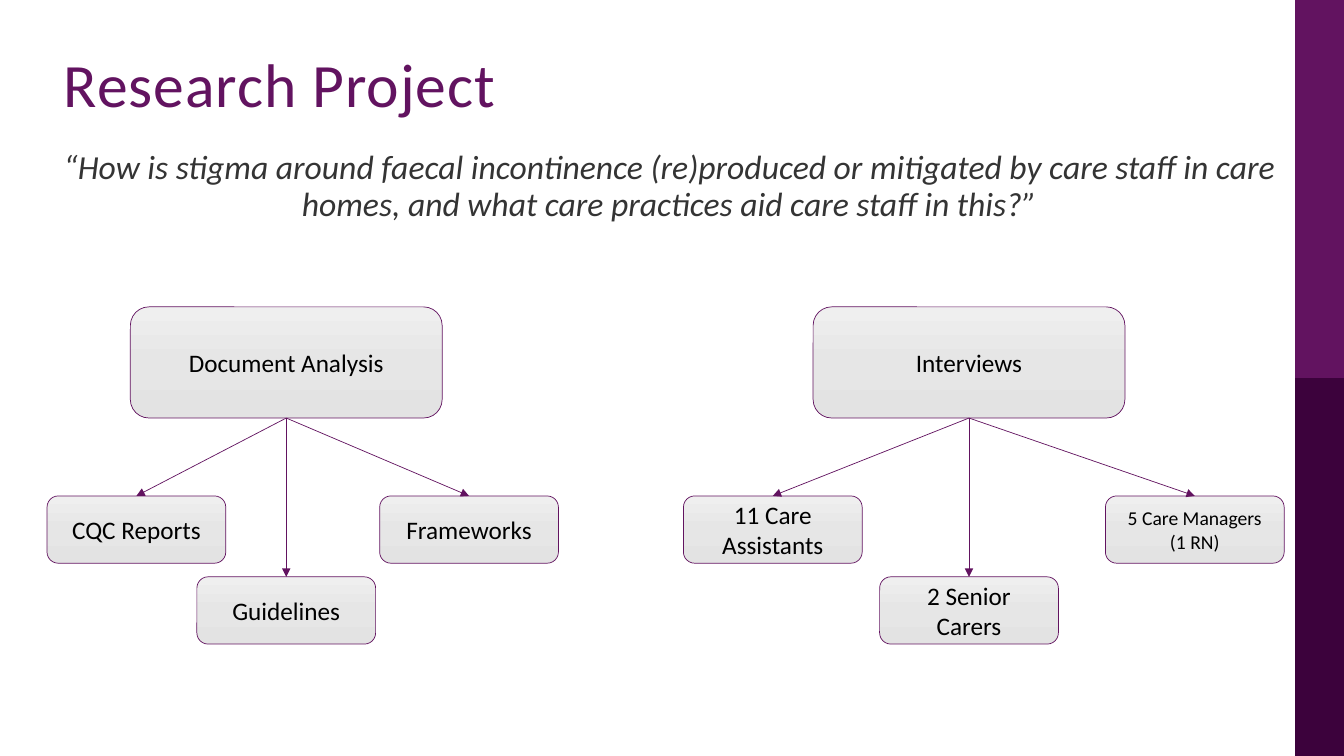
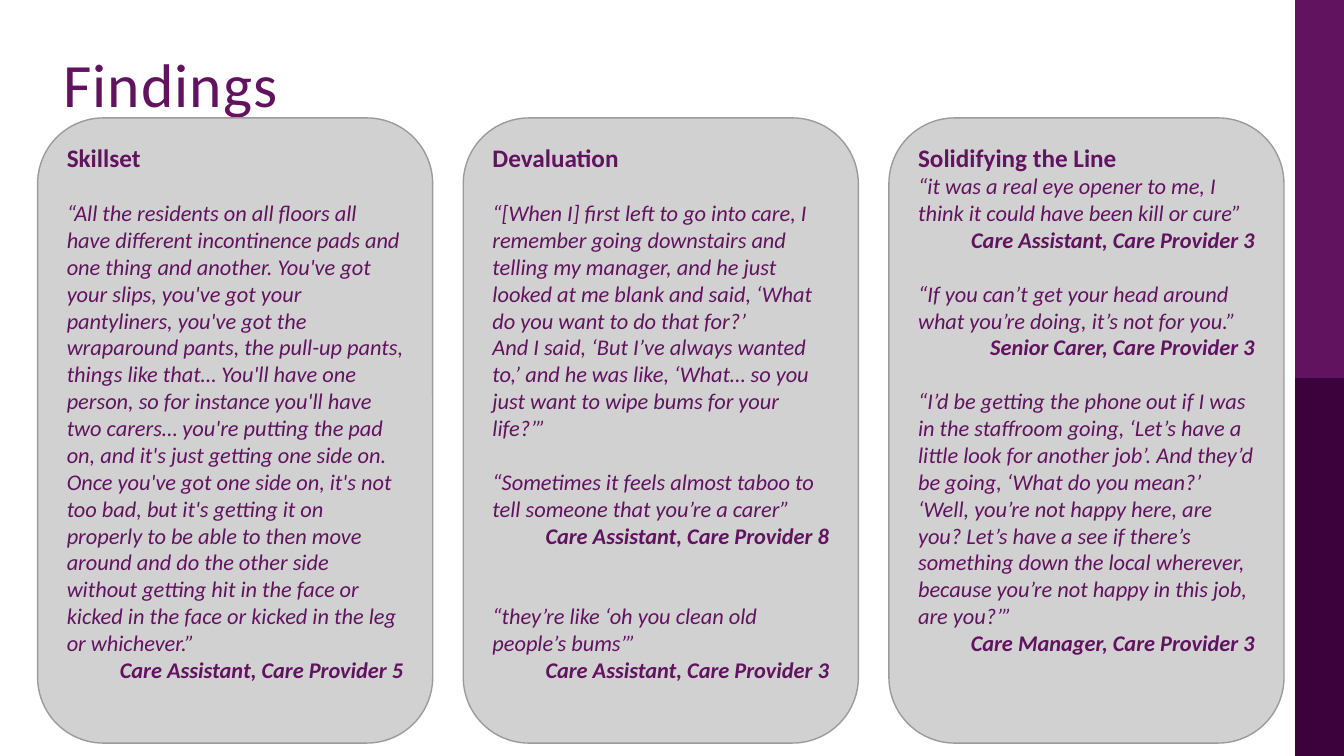
from copy import deepcopy
from dataclasses import dataclass
from typing import Any

from lxml import etree
from pptx import Presentation
from pptx.dml.color import RGBColor
from pptx.enum.shapes import MSO_CONNECTOR, MSO_SHAPE
from pptx.enum.text import MSO_ANCHOR, PP_ALIGN
from pptx.oxml.ns import qn
from pptx.util import Inches, Pt

RECT, ROUNDED = MSO_SHAPE.RECTANGLE, MSO_SHAPE.ROUNDED_RECTANGLE
STRAIGHT = MSO_CONNECTOR.STRAIGHT
TOP, MIDDLE = MSO_ANCHOR.TOP, MSO_ANCHOR.MIDDLE
LEFT, CENTER, RIGHT = PP_ALIGN.LEFT, PP_ALIGN.CENTER, PP_ALIGN.RIGHT

PLUM = RGBColor(0x62, 0x13, 0x60)
DARK_PLUM = RGBColor(0x3C, 0x02, 0x3C)
CHARCOAL = RGBColor(0x34, 0x34, 0x34)
BLACK = RGBColor(0, 0, 0)
CARD_FILL = RGBColor(0xD1, 0xD1, 0xD1)
CARD_LINE = RGBColor(0x9B, 0x9B, 0x9B)
BOX_STOPS = (
    (0, RGBColor(0xEF, 0xEF, 0xEF)),
    (0.5, RGBColor(0xE6, 0xE6, 0xE6)),
    (1, RGBColor(0xE3, 0xE3, 0xE3)),
)

FONT = "Calibri"
WIDTH, HEIGHT = Inches(13.33), Inches(7.5)
BLANK_LINE = 19.2  # points, one line of quote text

# All positions and sizes below are percentages of the slide's width and height.
BAND_LEFT, BAND_HEIGHT = 96.37, 50
TITLE_BOX = (4, 8.1, 91.4, 16.5)
QUESTION_BOX = (4, 19.3, 91.6, 13.9)
METHOD_TOP, METHOD_WIDTH, METHOD_HEIGHT = 40.6, 23.2, 14.7
LEAF_ROWS, LEAF_WIDTH, LEAF_HEIGHT = (65.6, 76.3), 13.3, 8.9
CARD_LEFT, CARD_TOP, CARD_PITCH = 2.8, 15.6, 31.67
CARD_WIDTH, CARD_HEIGHT = 29.4, 82.7

TITLE = {"font": {"size": Pt(44)}, "para": {"line_spacing": Pt(36)}}
QUESTION = {
    "font": {"size": Pt(24), "italic": True},
    "para": {"alignment": CENTER, "line_spacing": 0.9},
}
HEADING = {"font": {"size": Pt(18), "bold": True}, "para": {"alignment": LEFT}}
QUOTE = {"font": {"size": Pt(16), "italic": True}, "para": {"alignment": LEFT}}
SPEAKER = {
    "font": {"size": Pt(16), "italic": True, "bold": True},
    "para": {"alignment": RIGHT},
}


@dataclass(frozen=True)
class Para:
    text: str
    style: dict[str, Any]
    blank_lines: int = 0


@dataclass(frozen=True)
class Leaf:
    lines: tuple[str, ...]
    center: float
    row: int = 0
    size: int = 18


@dataclass(frozen=True)
class Method:
    label: str
    center: float
    leaves: tuple[Leaf, ...]


METHODS = (
    Method("Document Analysis", 21.3, (
        Leaf(("CQC Reports",), 10.15),
        Leaf(("Guidelines",), 21.3, row=1),
        Leaf(("Frameworks",), 34.9),
    )),
    Method("Interviews", 72.1, (
        Leaf(("11 Care Assistants",), 57.5),
        Leaf(("2 Senior Carers",), 72.1, row=1),
        Leaf(("5 Care Managers", "(1 RN)"), 88.9, size=14),
    )),
)

CARDS = (
    (
        Para("Skillset", HEADING),
        Para("“All the residents on all floors all have different incontinence pads and "
             "one thing and another. You've got your slips, you've got your pantyliners, "
             "you've got the wraparound pants, the pull-up pants, things like that… "
             "You'll have one person, so for instance you'll have two carers… you're "
             "putting the pad on, and it's just getting one side on. Once you've got one "
             "side on, it's not too bad, but it's getting it on properly to be able to "
             "then move around and do the other side without getting hit in the face or "
             "kicked in the face or kicked in the leg or whichever.”", QUOTE, 1),
        Para("Care Assistant, Care Provider 5", SPEAKER),
    ),
    (
        Para("Devaluation", HEADING),
        Para("“[When I] first left to go into care, I remember going downstairs and "
             "telling my manager, and he just looked at me blank and said, ‘What do you "
             "want to do that for?’", QUOTE, 1),
        Para("And I said, ‘But I’ve always wanted to,’ and he was like, ‘What… so you "
             "just want to wipe bums for your life?’”", QUOTE),
        Para("“Sometimes it feels almost taboo to tell someone that you’re a carer”",
             QUOTE, 1),
        Para("Care Assistant, Care Provider 8", SPEAKER),
        Para("“they’re like ‘oh you clean old people’s bums’”", QUOTE, 2),
        Para("Care Assistant, Care Provider 3", SPEAKER),
    ),
    (
        Para("Solidifying the Line", HEADING),
        Para("“it was a real eye opener to me, I think it could have been kill or cure”",
             QUOTE),
        Para("Care Assistant, Care Provider 3", SPEAKER),
        Para("“If you can’t get your head around what you’re doing, it’s not for you.”",
             QUOTE, 1),
        Para("Senior Carer, Care Provider 3", SPEAKER),
        Para("“I’d be getting the phone out if I was in the staffroom going, ‘Let’s have "
             "a little look for another job’. And they’d be going, ‘What do you mean?’ "
             "‘Well, you’re not happy here, are you? Let’s have a see if there’s "
             "something down the local wherever, because you’re not happy in this job, "
             "are you?’”", QUOTE, 1),
        Para("Care Manager, Care Provider 3", SPEAKER),
    ),
)


def place(x: float, y: float, w: float, h: float) -> tuple[int, int, int, int]:
    """Turn percentages of the slide into lengths."""
    return (round(WIDTH * x / 100), round(HEIGHT * y / 100),
            round(WIDTH * w / 100), round(HEIGHT * h / 100))


def write(sp: Any, paras: tuple[Para, ...], color: RGBColor, anchor: Any = TOP) -> None:
    tf = sp.text_frame
    tf.word_wrap = True
    tf.vertical_anchor = anchor
    for i, para in enumerate(paras):
        p = tf.paragraphs[0] if i == 0 else tf.add_paragraph()
        for name, value in para.style["para"].items():
            setattr(p, name, value)
        if para.blank_lines:
            p.space_before = Pt(para.blank_lines * BLANK_LINE)
        r = p.add_run()
        r.text = para.text
        r.font.name = FONT
        r.font.color.rgb = color
        for name, value in para.style["font"].items():
            setattr(r.font, name, value)


def add_solid(shapes: Any, kind: Any, box: tuple[float, ...], fill: RGBColor) -> Any:
    sp = shapes.add_shape(kind, *place(*box))
    sp.shadow.inherit = False
    sp.fill.solid()
    sp.fill.fore_color.rgb = fill
    sp.line.fill.background()
    return sp


def outline(sp: Any, color: RGBColor, width: float) -> None:
    sp.line.color.rgb = color
    sp.line.width = Pt(width)


def add_base_slide(prs: Any, title: str) -> Any:
    """Add a slide with the side bands and the title."""
    s = prs.slides.add_slide(prs.slide_layouts[6])
    for i, color in enumerate((PLUM, DARK_PLUM)):
        add_solid(s.shapes, RECT,
                  (BAND_LEFT, i * BAND_HEIGHT, 100 - BAND_LEFT, BAND_HEIGHT), color)
    sp = s.shapes.add_textbox(*place(*TITLE_BOX))
    write(sp, (Para(title, TITLE),), PLUM)
    sp.text_frame.margin_top = Inches(0.08)
    sp.text_frame.paragraphs[0].runs[0].font._element.set("spc", "70")
    return s


def add_box(shapes: Any, lines: tuple[str, ...], box: tuple[float, ...], size: int) -> Any:
    """Add a rounded box with a soft grey gradient."""
    sp = shapes.add_shape(ROUNDED, *place(*box))
    sp.shadow.inherit = False
    sp.fill.gradient()
    sp.fill.gradient_angle = 270
    first = sp._element.spPr.find(".//" + qn("a:gs"))
    first.addnext(deepcopy(first))
    for stop, (position, color) in zip(sp.fill.gradient_stops, BOX_STOPS):
        stop.position = position
        stop.color.rgb = color
    outline(sp, PLUM, 0.5)
    style = {"font": {"size": Pt(size)}, "para": {"alignment": CENTER}}
    write(sp, tuple(Para(line, style) for line in lines), BLACK, MIDDLE)
    return sp


def add_arrow(shapes: Any, parent: Any, child: Any) -> None:
    """Join the parent's bottom to the child's top."""
    line = shapes.add_connector(
        STRAIGHT, parent.left + parent.width // 2, parent.top + parent.height,
        child.left + child.width // 2, child.top)
    line.begin_connect(parent, 2)
    line.end_connect(child, 0)
    outline(line, PLUM, 0.5)
    etree.SubElement(line.line._get_or_add_ln(), qn("a:tailEnd"), type="triangle")
    etree.SubElement(line._element.spPr, qn("a:effectLst"))


def add_method(s: Any, method: Method) -> None:
    shapes = s.shapes.add_group_shape().shapes
    parent = add_box(shapes, (method.label,),
                     (method.center - METHOD_WIDTH / 2, METHOD_TOP,
                      METHOD_WIDTH, METHOD_HEIGHT), 18)
    for leaf in method.leaves:
        child = add_box(shapes, leaf.lines,
                        (leaf.center - LEAF_WIDTH / 2, LEAF_ROWS[leaf.row],
                         LEAF_WIDTH, LEAF_HEIGHT), leaf.size)
        add_arrow(shapes, parent, child)


def add_project_slide(prs: Any) -> None:
    s = add_base_slide(prs, "Research Project")
    question = Para("“How is stigma around faecal incontinence (re)produced or mitigated "
                    "by care staff in care homes, and what care practices aid care staff "
                    "in this?”", QUESTION)
    write(s.shapes.add_textbox(*place(*QUESTION_BOX)), (question,), CHARCOAL)
    for method in METHODS:
        add_method(s, method)


def add_findings_slide(prs: Any) -> None:
    s = add_base_slide(prs, "Findings")
    for i, paras in enumerate(CARDS):
        box = (CARD_LEFT + i * CARD_PITCH, CARD_TOP, CARD_WIDTH, CARD_HEIGHT)
        sp = add_solid(s.shapes, ROUNDED, box, CARD_FILL)
        outline(sp, CARD_LINE, 1)
        write(sp, paras, PLUM)


def main() -> None:
    prs = Presentation()
    prs.slide_width, prs.slide_height = WIDTH, HEIGHT
    add_project_slide(prs)
    add_findings_slide(prs)
    prs.save("out.pptx")


if __name__ == "__main__":
    main()
